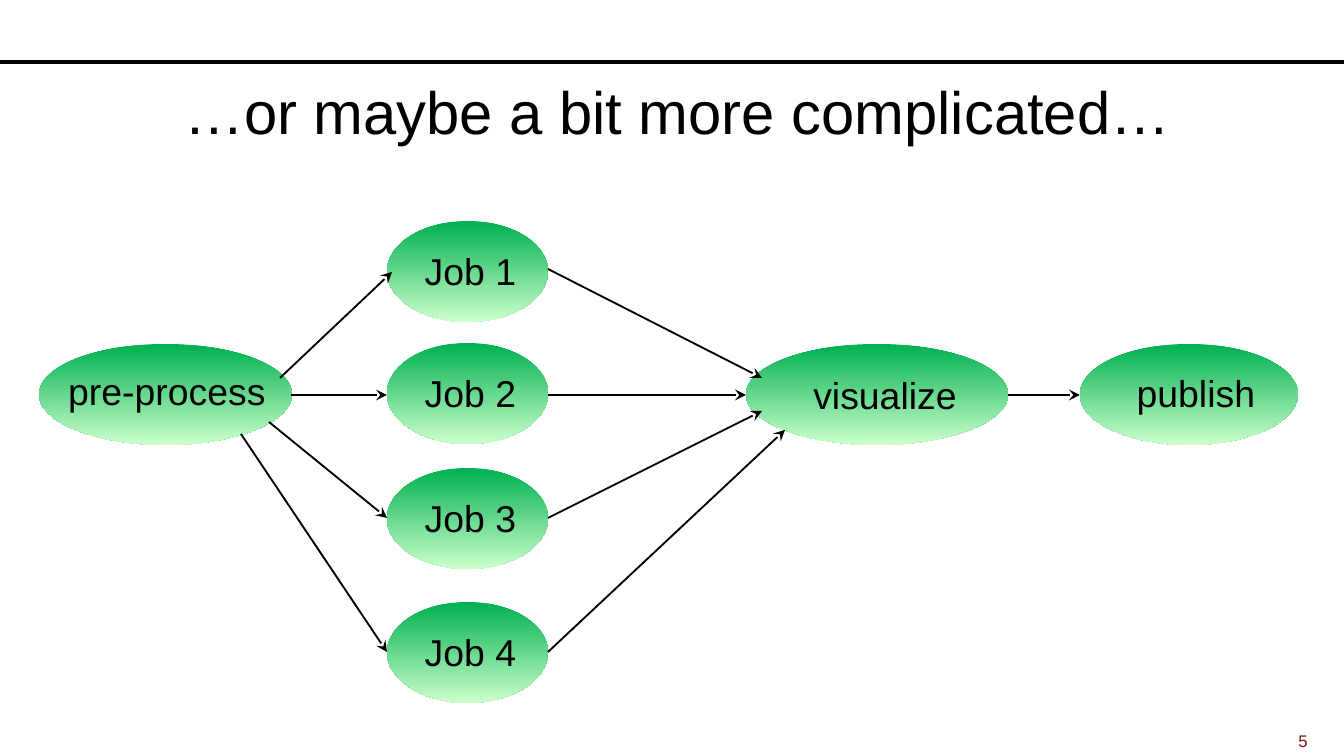
from dataclasses import dataclass

from lxml.etree import SubElement
from pptx import Presentation
from pptx.dml.color import RGBColor
from pptx.enum.shapes import MSO_CONNECTOR, MSO_SHAPE
from pptx.enum.text import MSO_ANCHOR, MSO_AUTO_SIZE, PP_ALIGN
from pptx.oxml.ns import qn
from pptx.util import Emu, Pt

SLIDE_WIDTH, SLIDE_HEIGHT = 1344, 756
EMU_PER_PX = 9144000 / SLIDE_WIDTH
NODE_HEIGHT, LABEL_HEIGHT = 101, 59
ROW_TOP, FLOW_Y = 344, 395
JOB_LEFT, JOB_WIDTH = 387, 161
JOB_RIGHT = JOB_LEFT + JOB_WIDTH


def px(length):
    """Convert pixels to EMU."""
    return Emu(round(length * EMU_PER_PX))


@dataclass(frozen=True)
class Theme:
    """Colours, font and type sizes of the slide."""
    ink: RGBColor = RGBColor(0x00, 0x00, 0x00)
    page_number: RGBColor = RGBColor(0x82, 0x15, 0x1A)
    node_top: RGBColor = RGBColor(0x00, 0xB0, 0x50)
    node_bottom: RGBColor = RGBColor(0xCC, 0xFF, 0xCC)
    font: str = "Arial"
    title_size: int = 32
    label_size: int = 20
    number_size: int = 9


class FlowSlide:
    """Draw the elements of a flow diagram on one slide."""

    def __init__(self, slide, theme):
        """Keep the slide and its theme."""
        self.slide = slide
        self.theme = theme

    def text(self, box, content, size, color, align=PP_ALIGN.CENTER, anchor=MSO_ANCHOR.TOP):
        """Add a one-paragraph text box."""
        shape = self.slide.shapes.add_textbox(*map(px, box))
        frame = shape.text_frame
        frame.word_wrap = True
        frame.vertical_anchor = anchor
        frame.text = content
        paragraph = frame.paragraphs[0]
        paragraph.alignment = align
        font = paragraph.runs[0].font
        font.name, font.size = self.theme.font, Pt(size)
        font.color.rgb = color
        return shape

    def node(self, left, top, width, label, label_box):
        """Add a gradient ellipse and its label."""
        ellipse = self.slide.shapes.add_shape(
            MSO_SHAPE.OVAL, px(left), px(top), px(width), px(NODE_HEIGHT))
        ellipse.shadow.inherit = False
        ellipse.line.fill.background()
        ellipse.fill.gradient()
        ellipse.fill.gradient_angle = 270
        colors = (self.theme.node_top, self.theme.node_bottom)
        for position, (stop, color) in enumerate(zip(ellipse.fill.gradient_stops, colors)):
            stop.position = position
            stop.color.rgb = color
        label_left, label_top, label_width = label_box
        box = (label_left, label_top, label_width, LABEL_HEIGHT)
        shape = self.text(box, label, self.theme.label_size, self.theme.ink)
        shape.text_frame.auto_size = MSO_AUTO_SIZE.SHAPE_TO_FIT_TEXT

    def line(self, start, end, width):
        """Add a straight line."""
        connector = self.slide.shapes.add_connector(
            MSO_CONNECTOR.STRAIGHT, *map(px, start + end))
        connector.line.color.rgb = self.theme.ink
        connector.line.width = Pt(width)
        SubElement(connector._element.spPr, qn("a:effectLst"))
        return connector

    def arrow(self, start, end):
        """Add a thin line with a stealth head at its end."""
        connector = self.line(start, end, 1)
        SubElement(connector.line._get_or_add_ln(), qn("a:tailEnd"), type="stealth")


def main():
    """Build and save the slide."""
    presentation = Presentation()
    presentation.slide_width = px(SLIDE_WIDTH)
    presentation.slide_height = px(SLIDE_HEIGHT)
    theme = Theme()
    flow = FlowSlide(presentation.slides.add_slide(presentation.slide_layouts[6]), theme)

    flow.line((0, 62), (SLIDE_WIDTH, 62), 2)
    flow.text((23, 67, 1310, 87), "…or maybe a bit more complicated…",
              theme.title_size, theme.ink, anchor=MSO_ANCHOR.MIDDLE)
    flow.text((1176, 724, 145, 26), "5", theme.number_size,
              theme.page_number, align=PP_ALIGN.RIGHT)

    flow.node(39, ROW_TOP, 253, "pre-process", (55, 362, 224))
    flow.node(746, ROW_TOP, 262, "visualize", (762, 366, 246))
    flow.node(1080, ROW_TOP, 218, "publish", (1098, 364, 196))

    jobs = (
        (221, (280, 378), (392, 272), (548, 269), (762, 378)),
        (343, (291, FLOW_Y), (387, FLOW_Y), (548, FLOW_Y), (746, FLOW_Y)),
        (468, (269, 422), (387, 518), (548, 518), (762, 411)),
        (602, (241, 434), (387, 652), (548, 652), (785, 430)),
    )
    for number, (top, *_) in enumerate(jobs, start=1):
        flow.node(JOB_LEFT, top, JOB_WIDTH, f"Job {number}", (392, top + 21, 157))
    for _, leave, enter, depart, arrive in jobs:
        flow.arrow(leave, enter)
        flow.arrow(depart, arrive)
    flow.arrow((1008, FLOW_Y), (1080, FLOW_Y))

    presentation.save("out.pptx")


if __name__ == "__main__":
    main()
